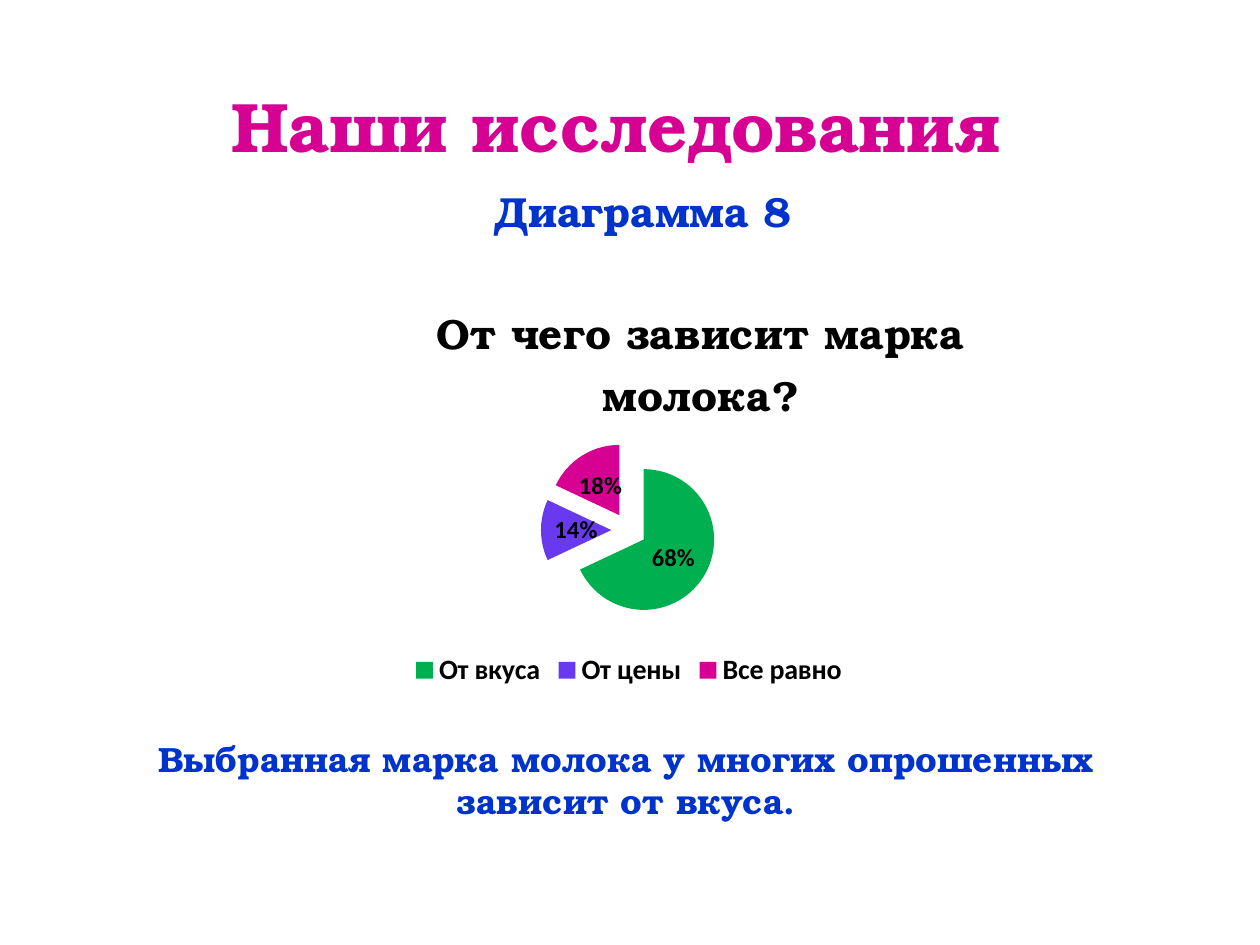
from lxml import etree
from pptx import Presentation
from pptx.chart.data import CategoryChartData
from pptx.dml.color import RGBColor
from pptx.enum.chart import XL_CHART_TYPE, XL_LABEL_POSITION, XL_LEGEND_POSITION
from pptx.enum.text import MSO_ANCHOR, MSO_AUTO_SIZE, PP_ALIGN
from pptx.oxml import parse_xml
from pptx.oxml.ns import nsdecls
from pptx.util import Emu, Pt

EMU_PER_PX = 914400 / 126
SERIF = "TeX Gyre Bonum"
QUESTION = "От чего зависит марка молока?"


def box(*lengths):
    return [Emu(round(length * EMU_PER_PX)) for length in lengths]


def style(font, size, color, name):
    font.size, font.bold, font.name = Pt(size), True, name
    font.color.rgb = RGBColor.from_string(color)


prs = Presentation()
prs.slide_width, prs.slide_height = box(1260, 945)
slide = prs.slides.add_slide(prs.slide_layouts[5])

# Heading, subheading and conclusion
heading = slide.shapes.title
heading.left, heading.top, heading.width, heading.height = box(213, 76, 805, 97)
subheading = slide.shapes.add_textbox(*box(464, 179, 358, 66))
conclusion = slide.shapes.add_textbox(*box(105, 731, 1042, 97))
for part, text, size, color, wrap in (
    (heading, "Наши исследования", 40, "D60093", False),
    (subheading, "Диаграмма 8", 24, "0033CC", False),
    (conclusion, "Выбранная марка молока у многих опрошенных зависит от вкуса.",
     20, "0033CC", True),
):
    frame = part.text_frame
    frame.text = text
    frame.word_wrap = wrap
    frame.auto_size = MSO_AUTO_SIZE.NONE
    frame.vertical_anchor = MSO_ANCHOR.TOP
    frame.paragraphs[0].alignment = PP_ALIGN.CENTER
    style(frame.paragraphs[0].font, size, color, SERIF)

# Survey pie
answers = CategoryChartData(number_format="0%")
answers.categories = ["От вкуса", "От цены", "Все равно"]
answers.add_series(QUESTION, (0.68, 0.14, 0.18))
chart = slide.shapes.add_chart(XL_CHART_TYPE.PIE, *box(229, 253, 800, 440), answers).chart
chart.font.size, chart.font.name = Pt(10), "Calibri"

question = chart.chart_title.text_frame
question.text = QUESTION
question.paragraphs[0].alignment = PP_ALIGN.CENTER
style(question.paragraphs[0].font, 24, "000000", SERIF)

chart.has_legend = True
chart.legend.position = XL_LEGEND_POSITION.BOTTOM
chart.legend.include_in_layout = False
style(chart.legend.font, 16, "000000", "Calibri")

pie = chart.plots[0]
pie.vary_by_categories = True
shares = pie.series[0]
for index, color in enumerate(("00B050", "6939EF", "D60093")):
    fill = shares.points[index].format.fill
    fill.solid()
    fill.fore_color.rgb = RGBColor.from_string(color)

labels = shares.data_labels
labels.show_value = True
labels.number_format, labels.number_format_is_linked = "0%", False
labels.position = XL_LABEL_POSITION.CENTER
style(labels.font, 14, "000000", "Calibri")

# Pull the slices apart
explosion = parse_xml(f'<c:explosion {nsdecls("c")} val="25"/>')
shares._element.find("{*}dPt").addprevious(explosion)

# Place the question and the pie as fractions of the chart
for owner, target, places in (
    (chart.chart_title._element, None, {"x": 0.25, "y": 0.08}),
    (chart._chartSpace.chart.plotArea, "inner",
     {"x": 0.39, "y": 0.43, "w": 0.22, "h": 0.4}),
):
    for old in owner.findall("{*}layout"):
        owner.remove(old)
    layout = parse_xml(f'<c:layout {nsdecls("c")}><c:manualLayout/></c:layout>')
    settings = [("layoutTarget", target)] if target else []
    settings += [("xMode", "edge"), ("yMode", "edge"), *places.items()]
    for tag, value in settings:
        namespace = etree.QName(layout).namespace
        etree.SubElement(layout[0], f"{{{namespace}}}{tag}").set("val", str(value))
    owner.insert(0 if target else 1, layout)

prs.save("out.pptx")
